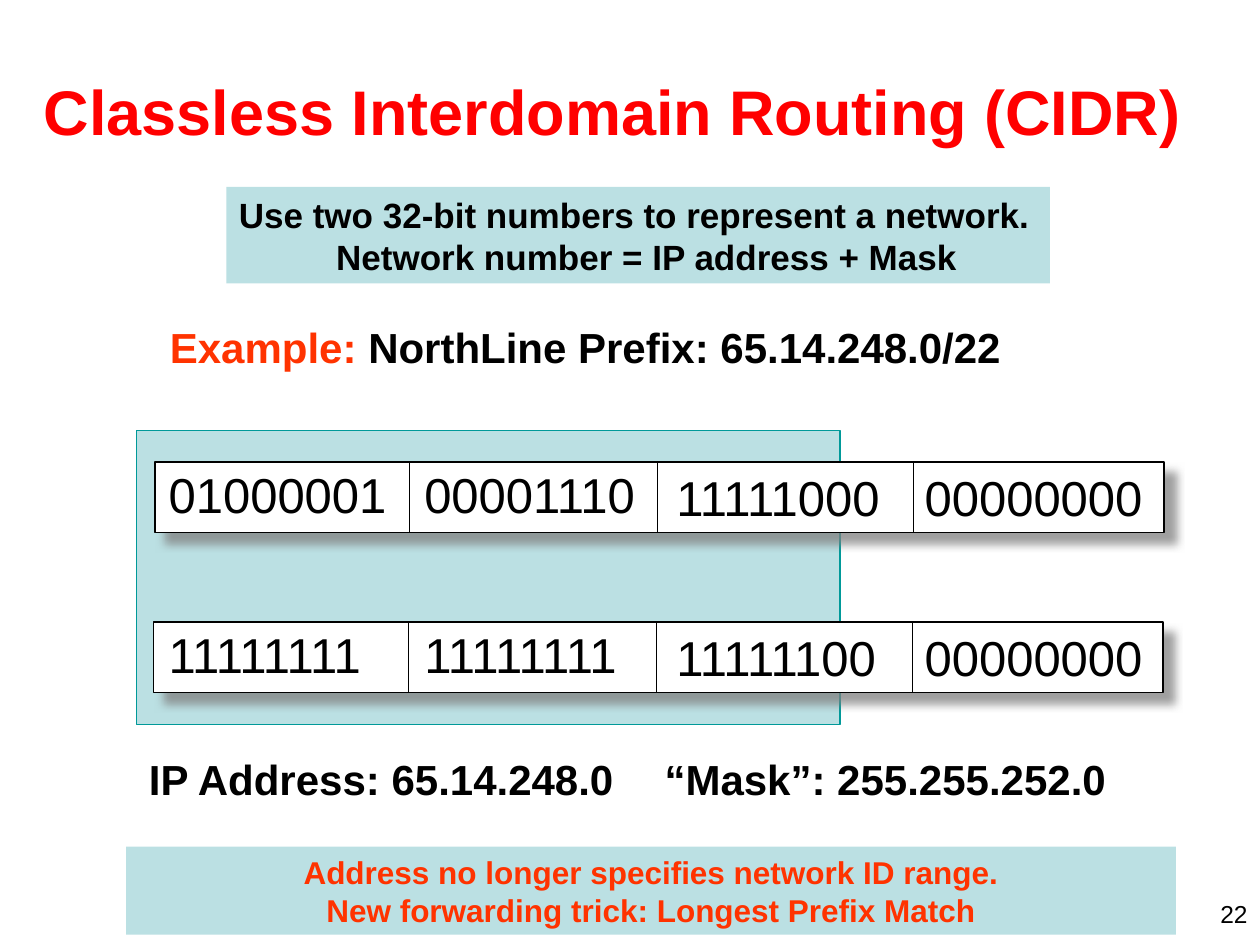
from dataclasses import dataclass

from lxml.etree import SubElement as Sub
from pptx import Presentation
from pptx.dml.color import RGBColor as Rgb
from pptx.enum.shapes import MSO_CONNECTOR as Link, MSO_SHAPE as Kind
from pptx.enum.text import MSO_ANCHOR as Anchor, MSO_AUTO_SIZE as Fit, PP_ALIGN as Align
from pptx.oxml.ns import qn
from pptx.util import Pt


@dataclass(frozen=True)
class Theme:
    """Hold the font, colours and type sizes."""
    font: str = "Arial"
    ink: str = "000000"
    paper: str = "FFFFFF"
    title: str = "FF0000"
    hot: str = "FF3300"
    pale: str = "BBE0E3"
    edge: str = "009999"
    shade: str = "808080"
    huge: int = 36
    bits: int = 28
    head: int = 24
    body: int = 20
    foot: int = 18
    page: int = 14


T = Theme()
EDGES = 234, 375.8, 522
CELLS = (89.3, 0), (235.4, 0), (379.4, 1.4), (521.3, 1.4)
ROWS = (
    (88.4, 264, ("01000001", "00001110", "11111000", "00000000")),
    (87.8, 355.5, ("11111111", "11111111", "11111100", "00000000")),
)


def write(frame, lines, size, bold=True, align=Align.LEFT, wrap=True, grow=True):
    """Fill a frame with paragraphs, each a list of (text, colour) runs."""
    frame.word_wrap = wrap
    frame.auto_size = Fit.SHAPE_TO_FIT_TEXT if grow else Fit.NONE
    frame.vertical_anchor = Anchor.TOP
    for i, runs in enumerate(lines):
        para = frame.add_paragraph() if i else frame.paragraphs[0]
        para.alignment = align
        for text, hue in runs:
            run = para.add_run()
            run.text = text
            font = run.font
            font.name, font.size, font.bold = T.font, Pt(size), bold
            font.color.rgb = Rgb.from_string(hue)


def label(shapes, box, lines, size, **style):
    """Add a text box."""
    frame = shapes.add_textbox(*map(Pt, box)).text_frame
    write(frame, lines, size, **style)
    return frame


def block(shapes, box, fill, edge=None):
    """Add a filled rectangle with an optional outline."""
    rect = shapes.add_shape(Kind.RECTANGLE, *map(Pt, box))
    rect.shadow.inherit = False
    rect.fill.solid()
    rect.fill.fore_color.rgb = Rgb.from_string(fill)
    if edge:
        rect.line.color.rgb = Rgb.from_string(edge)
        rect.line.width = Pt(1)
    else:
        rect.line.fill.background()
    return rect


def shade(rect):
    """Give a rectangle a soft shadow to the lower right."""
    effect = rect._element.spPr.find(qn("a:effectLst"))
    outer = Sub(effect, qn("a:outerShdw"), blurRad=str(Pt(5)), dist=str(Pt(8.5)),
                dir="2700000", algn="ctr", rotWithShape="0")
    hue = Sub(outer, qn("a:srgbClr"), val=T.shade)
    Sub(hue, qn("a:alpha"), val="75000")


def rule(shapes, x, top, end):
    """Add a thin upright line."""
    line = shapes.add_connector(Link.STRAIGHT, Pt(x), Pt(top), Pt(x), Pt(end))
    line.line.color.rgb = Rgb.from_string(T.ink)
    line.line.width = Pt(1)
    Sub(line._element.spPr, qn("a:effectLst"))


def octets(shapes, left, top, words):
    """Add one grouped row of four binary octets."""
    group = shapes.add_group_shape().shapes
    shade(block(group, (left, top, 576.7, 40.3), T.paper, T.ink))
    for x in EDGES:
        rule(group, x + left - ROWS[0][0], top, top + 40.3)
    for word, (x, drop) in zip(words, CELLS):
        label(group, (x, top - 2 + drop, 139.7, 41), [[(word, T.ink)]],
              T.bits, bold=False, wrap=False)


def main():
    """Build and save the slide."""
    deck = Presentation()
    deck.slide_width, deck.slide_height = Pt(720), Pt(540)
    shapes = deck.slides.add_slide(deck.slide_layouts[6]).shapes

    label(shapes, (552, 510, 168, 18), [[("22", T.ink)]], T.page,
          bold=False, align=Align.RIGHT, grow=False)
    title = label(shapes, (18, 18, 678, 90),
                  [[("Classless Interdomain Routing (CIDR)", T.title)]],
                  T.huge, grow=False)
    title.vertical_anchor = Anchor.MIDDLE
    label(shapes, (78, 427, 561.6, 36),
          [[("IP Address: 65.14.248.0\t “Mask”: 255.255.252.0", T.ink)]],
          T.head, wrap=False)

    block(shapes, (78, 246, 402, 168), T.pale, T.edge)
    for row in ROWS:
        octets(shapes, *row)

    intro = block(shapes, (129.4, 106.8, 470.6, 55.2), T.pale).text_frame
    write(intro, [[("Use two 32-bit numbers to represent a network.", T.ink)],
                  [("Network number = IP address + Mask", T.ink)]],
          T.body)
    intro.paragraphs[1]._p.get_or_add_pPr().set("marL", str(Pt(55.6)))

    label(shapes, (90, 180, 504, 36),
          [[("Example:", T.hot), (" NorthLine Prefix: 65.14.248.0/22", T.ink)]],
          T.head)
    note = block(shapes, (72, 483.8, 600, 50.4), T.pale).text_frame
    write(note, [[("Address no longer specifies network ID range.", T.hot)],
                 [("New forwarding trick: Longest Prefix Match", T.hot)]],
          T.foot, align=Align.CENTER)
    deck.save("out.pptx")


if __name__ == "__main__":
    main()
